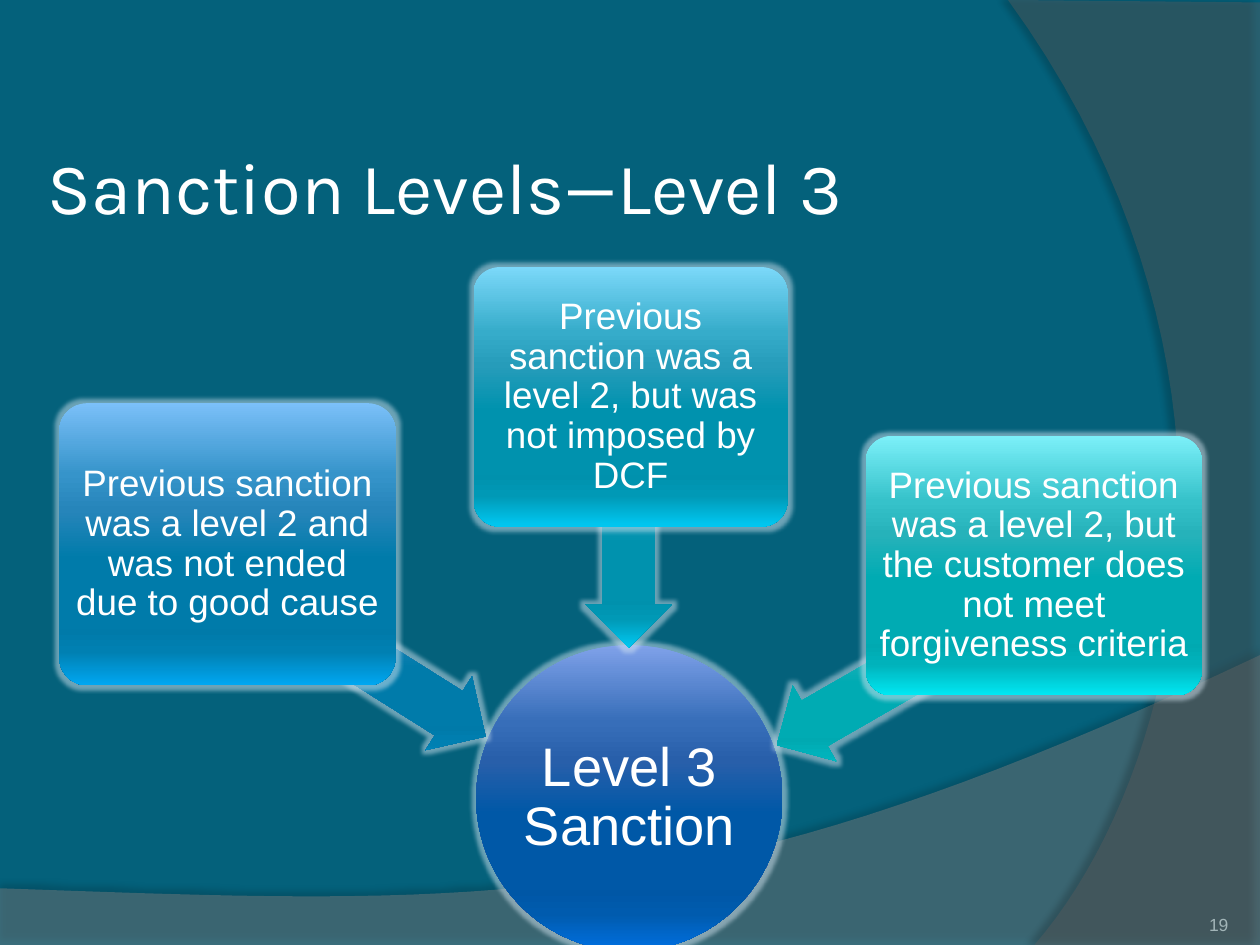
"""Build the slide on level 3 sanctions."""
from dataclasses import dataclass
from typing import Any

from lxml import etree
from pptx import Presentation, util as u
from pptx.dml.color import RGBColor
from pptx.enum import shapes, text
from pptx.oxml.ns import qn

COLUMNS, ROWS = 10, 7.5
UNIT = u.Inches(1)
STOPS = (0, 25, 38, 55, 80, 88, 100)
ROYAL = "7FA1E9 376EB9 285FAA 0058A7 0057A6 005BAE 0070E2"
BLUE = "7BC0F9 3694CA 2685BA 007BAA 007AA9 0080B2 00A7F1"
CYAN = "7BD8F9 36ACCA 269CBA 0092AE 0091AD 0099B6 00C8F2"
TEAL = "7CF0F9 36C2CA 26B2BA 00ABB3 00A9B1 00B2BB 00E8F3"
Point = tuple[float, float]


@dataclass
class Swoosh:
    """A translucent background outline with one curved side."""
    start: Point
    corners: list[Point]
    curve: list[Point]
    color: str
    opacity: int
    shadow_opacity: int
    shadow_distance: float
    shadow_angle: int


@dataclass
class Cause:
    """A box and the arrow that leads from it to the hub."""
    wording: str
    box: tuple[float, float, float, float]
    arrow_center: Point
    arrow_length: float
    rotation: float
    palette: str


SWOOSHES = [
    Swoosh((0, 7.05), [(0, 7.5), (10, 7.5), (10, 5.2)],
           [(5.59, 7.29), (3.91, 7.19), (0, 7.05)], "7F7F7F", 45, 35, 3.5, 270),
    Swoosh((10, 0.02), [(10, 7.5), (8.21, 7.5)],
           [(9.35, 6.19), (10.18, 3), (8, 0)], "5E5E5E", 40, 45, 4, 180),
]
CAUSES = [
    Cause("Previous sanction was a level 2 and was not ended due to good cause",
          (0.47, 3.2, 2.67, 2.24), (2.83, 5.2), 2.42, 212.2, BLUE),
    Cause("Previous sanction was a level 2, but was not imposed by DCF",
          (3.76, 2.12, 2.49, 2.06), (4.99, 4.21), 1.86, 270, CYAN),
    Cause("Previous sanction was a level 2, but the customer does not meet "
          "forgiveness criteria",
          (6.87, 3.46, 2.67, 2.06), (7.18, 5.33), 2.34, 330.1, TEAL),
]


def rgb(value: str) -> RGBColor:
    """Turn a hex string into a colour."""
    return RGBColor.from_string(value)


def apply(target: Any, **formats: Any) -> None:
    """Set each format value on the target."""
    for name, value in formats.items():
        setattr(target, name, value)


def grid(*lengths: float) -> list[int]:
    """Turn columns and rows into slide lengths."""
    return [round(length * UNIT) for length in lengths]


def add_node(parent: Any, tag: str, **attributes: Any) -> Any:
    """Append a drawing element."""
    values = {name: str(value) for name, value in attributes.items()}
    return etree.SubElement(parent, qn(f"a:{tag}"), values)


def add_effect(shape: Any, tag: str, color: str, opacity: int, **attributes: Any) -> None:
    """Give a shape one translucent effect and no outline."""
    shape.line.fill.background()
    shape.shadow.inherit = False
    effects = shape.element.spPr.find(qn("a:effectLst"))
    node = add_node(add_node(effects, tag, **attributes), "srgbClr", val=color)
    add_node(node, "alpha", val=opacity * 1000)


def write(shape: Any, wording: str, size: float, font: str = "Arial",
          color: str = "FFFFFF", inset: float = 0.04,
          anchor: Any = text.MSO_ANCHOR.MIDDLE,
          alignment: Any = text.PP_ALIGN.CENTER, spacing: float = 0.9) -> None:
    """Write one formatted paragraph into a shape."""
    frame = shape.text_frame
    sides = ("left", "top", "right", "bottom")
    apply(frame, word_wrap=True, auto_size=text.MSO_AUTO_SIZE.NONE,
          vertical_anchor=anchor,
          **{f"margin_{side}": u.Inches(inset) for side in sides})
    paragraph = frame.paragraphs[0]
    apply(paragraph, alignment=alignment, line_spacing=spacing)
    run = paragraph.add_run()
    run.text = wording
    apply(run.font, size=u.Pt(size), name=font)
    run.font.color.rgb = rgb(color)


def curve_points(start: Point, first: Point, second: Point, end: Point,
                 steps: int = 40) -> list[Point]:
    """Sample a cubic curve."""
    shares = [step / steps for step in range(1, steps + 1)]
    return [tuple((1 - t) ** 3 * a + 3 * t * (1 - t) ** 2 * b
                  + 3 * t ** 2 * (1 - t) * c + t ** 3 * d
                  for a, b, c, d in zip(start, first, second, end))
            for t in shares]


def draw_swoosh(slide: Any, swoosh: Swoosh) -> None:
    """Draw a background swoosh."""
    points = swoosh.corners + curve_points(swoosh.corners[-1], *swoosh.curve)
    builder = slide.shapes.build_freeform(*grid(*swoosh.start))
    builder.add_line_segments([grid(*point) for point in points])
    shape = builder.convert_to_shape()
    shape.fill.solid()
    shape.fill.fore_color.rgb = rgb(swoosh.color)
    color = shape.element.spPr.find(qn("a:solidFill"))[0]
    add_node(color, "alpha", val=swoosh.opacity * 1000)
    add_effect(shape, "outerShdw", "000000", swoosh.shadow_opacity,
               blurRad=u.Pt(4), dist=u.Pt(swoosh.shadow_distance),
               dir=swoosh.shadow_angle * 60000)


def draw_glossy(slide: Any, kind: Any, place: tuple[float, ...], palette: str) -> Any:
    """Draw a glowing shape with a vertical gradient."""
    shape = slide.shapes.add_shape(kind, *grid(*place))
    shape.fill.gradient()
    shape.fill.gradient_angle = 270
    gradient = shape.element.spPr.find(qn("a:gradFill"))
    gradient.set("rotWithShape", "0")
    stops = gradient.find(qn("a:gsLst"))
    for stop in list(stops):
        stops.remove(stop)
    for position, color in zip(STOPS, palette.split()):
        add_node(add_node(stops, "gs", pos=position * 1000), "srgbClr", val=color)
    add_effect(shape, "glow", "D5E6F2", 50, rad=u.Pt(5))
    return shape


def draw_cause(slide: Any, cause: Cause) -> None:
    """Draw an arrow and the box on top of its tail."""
    (x, y), length, thickness = cause.arrow_center, cause.arrow_length, 0.69
    arrow = draw_glossy(slide, shapes.MSO_SHAPE.LEFT_ARROW,
                        (x - length / 2, y - thickness / 2, length, thickness),
                        cause.palette)
    arrow.rotation = cause.rotation
    arrow.adjustments[0] = 0.6
    box = draw_glossy(slide, shapes.MSO_SHAPE.ROUNDED_RECTANGLE, cause.box, cause.palette)
    box.adjustments[0] = 0.1
    write(box, cause.wording, 21)


def main() -> None:
    """Build and save the presentation."""
    presentation = Presentation()
    apply(presentation, slide_width=COLUMNS * UNIT, slide_height=round(ROWS * UNIT))
    slide = presentation.slides.add_slide(presentation.slide_layouts[5])
    slide.background.fill.solid()
    slide.background.fill.fore_color.rgb = rgb("04617B")
    for swoosh in SWOOSHES:
        draw_swoosh(slide, swoosh)

    title = slide.shapes.title
    slide.shapes.element.append(title.element)
    apply(title, **dict(zip(("left", "top", "width", "height"),
                            grid(0.33, 1.08, 9.25, 0.78))))
    write(title, "Sanction Levels—Level 3", 41.4, font="Karla", inset=0.05,
          alignment=text.PP_ALIGN.LEFT, spacing=1.0)

    hub = draw_glossy(slide, shapes.MSO_SHAPE.OVAL, (3.78, 5.12, 2.43, 2.43), ROYAL)
    write(hub, "Level 3 Sanction", 31, inset=0.02)
    for cause in CAUSES:
        draw_cause(slide, cause)

    number = slide.shapes.add_textbox(*grid(8.92, 7.02, 0.83, 0.4))
    write(number, "19", 10, color="A2B5B8", inset=0, anchor=text.MSO_ANCHOR.BOTTOM,
          alignment=text.PP_ALIGN.RIGHT, spacing=1.0)
    presentation.save("out.pptx")


if __name__ == "__main__":
    main()
